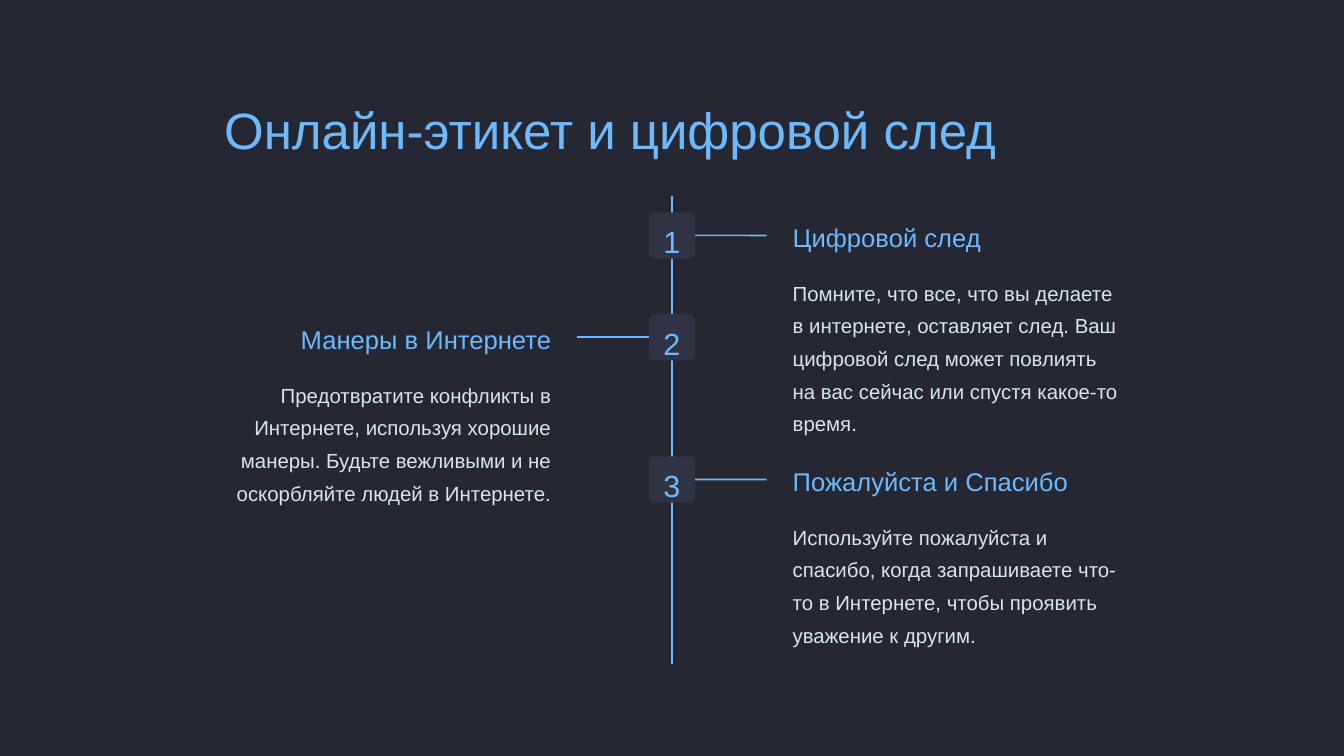
import pptx
import pptx.util
import pptx.dml.color
import pptx.enum.shapes
import pptx.enum.text
import pptx.oxml.ns
from lxml import etree
from pptx.util import Cm, Pt

TITLE = "Онлайн-этикет и цифровой след"
STEPS = [
    {"side": 1, "center": 7.12, "heading": "Цифровой след",
     "body": "Помните, что все, что вы делаете в интернете, оставляет след. "
             "Ваш цифровой след может повлиять на вас сейчас или спустя какое-то время."},
    {"side": -1, "center": 10.2, "heading": "Манеры в Интернете",
     "body": "Предотвратите конфликты в Интернете, используя хорошие манеры. "
             "Будьте вежливыми и не оскорбляйте людей в Интернете."},
    {"side": 1, "center": 14.5, "heading": "Пожалуйста и Спасибо",
     "body": "Используйте пожалуйста и спасибо, когда запрашиваете что-то в Интернете, "
             "чтобы проявить уважение к другим."},
]

THEME = {
    "font": "Arial",
    "background": "252833",
    "accent": "6EB9FC",
    "badge": "2F3343",
    "text": "D6E5EF",
    "title": (43.7, 54.7),
    "number": (26.2, 32.8),
    "heading": (21.9, 27.3),
    "body": (17.5, 28),
    "line": 1.35,
}

WIDTH, HEIGHT = 40.64, 22.86
AXIS = WIDTH / 2
AXIS_TOP, AXIS_BOTTOM = 5.94, 20.09
BADGE = 1.4
BRANCH = 2.16
TEXT_OFFSET, TEXT_WIDTH = 3.4, 10.41
ALIGN = pptx.enum.text.PP_ALIGN


def color(name):
    return pptx.dml.color.RGBColor.from_string(THEME[name])


def write(frame, text, style, color_name="accent", align=ALIGN.LEFT, wrap=True):
    size, spacing = THEME[style]
    frame.word_wrap = wrap
    frame.vertical_anchor = pptx.enum.text.MSO_ANCHOR.TOP
    paragraph = frame.paragraphs[0]
    paragraph.alignment = align
    paragraph.line_spacing = Pt(spacing)
    run = paragraph.add_run()
    run.text = text
    run.font.name = THEME["font"]
    run.font.size = Pt(size)
    run.font.color.rgb = color(color_name)


def add_text(slide, box, *content, **options):
    shape = slide.shapes.add_textbox(*(Cm(length) for length in box))
    write(shape.text_frame, *content, **options)


def add_line(slide, start, end):
    line = slide.shapes.add_connector(
        pptx.enum.shapes.MSO_CONNECTOR.STRAIGHT,
        *(Cm(length) for length in start + end))
    line.line.color.rgb = color("accent")
    line.line.width = Pt(THEME["line"])
    etree.SubElement(line._element.spPr, pptx.oxml.ns.qn("a:effectLst"))
    return line


def add_badge(slide, number, top):
    badge = slide.shapes.add_shape(
        pptx.enum.shapes.MSO_SHAPE.ROUNDED_RECTANGLE,
        Cm(AXIS - BADGE / 2), Cm(top), Cm(BADGE), Cm(BADGE))
    badge.adjustments[0] = 0.13
    badge.shadow.inherit = False
    badge.fill.solid()
    badge.fill.fore_color.rgb = color("badge")
    badge.line.fill.background()
    frame = badge.text_frame
    frame.margin_left = frame.margin_right = frame.margin_bottom = 0
    frame.margin_top = Cm(0.23)
    write(frame, str(number), "number", align=ALIGN.CENTER)
    return badge


def add_step(slide, number, step):
    side, center = step["side"], step["center"]
    top = center - BADGE / 2
    badge = add_badge(slide, number, top)
    edge = AXIS + side * BADGE / 2
    branch = add_line(slide, (edge, center), (edge + side * BRANCH, center))
    branch.begin_connect(badge, 3 if side > 0 else 1)
    left = AXIS + TEXT_OFFSET if side > 0 else AXIS - TEXT_OFFSET - TEXT_WIDTH
    align = ALIGN.LEFT if side > 0 else ALIGN.RIGHT
    add_text(slide, (left, top + 0.13, TEXT_WIDTH, 0.97),
             step["heading"], "heading", align=align)
    add_text(slide, (left, top + 1.7, TEXT_WIDTH, 3.94),
             step["body"], "body", "text", align=align)


def main():
    presentation = pptx.Presentation()
    presentation.slide_width = Cm(WIDTH)
    presentation.slide_height = Cm(HEIGHT)
    slide = presentation.slides.add_slide(presentation.slide_layouts[6])
    slide.background.fill.solid()
    slide.background.fill.fore_color.rgb = color("background")
    add_text(slide, (6.53, 2.77, 24.89, 1.93), TITLE, "title", wrap=False)
    add_line(slide, (AXIS, AXIS_TOP), (AXIS, AXIS_BOTTOM))
    for number, step in enumerate(STEPS, 1):
        add_step(slide, number, step)
    presentation.save("out.pptx")


if __name__ == "__main__":
    main()
